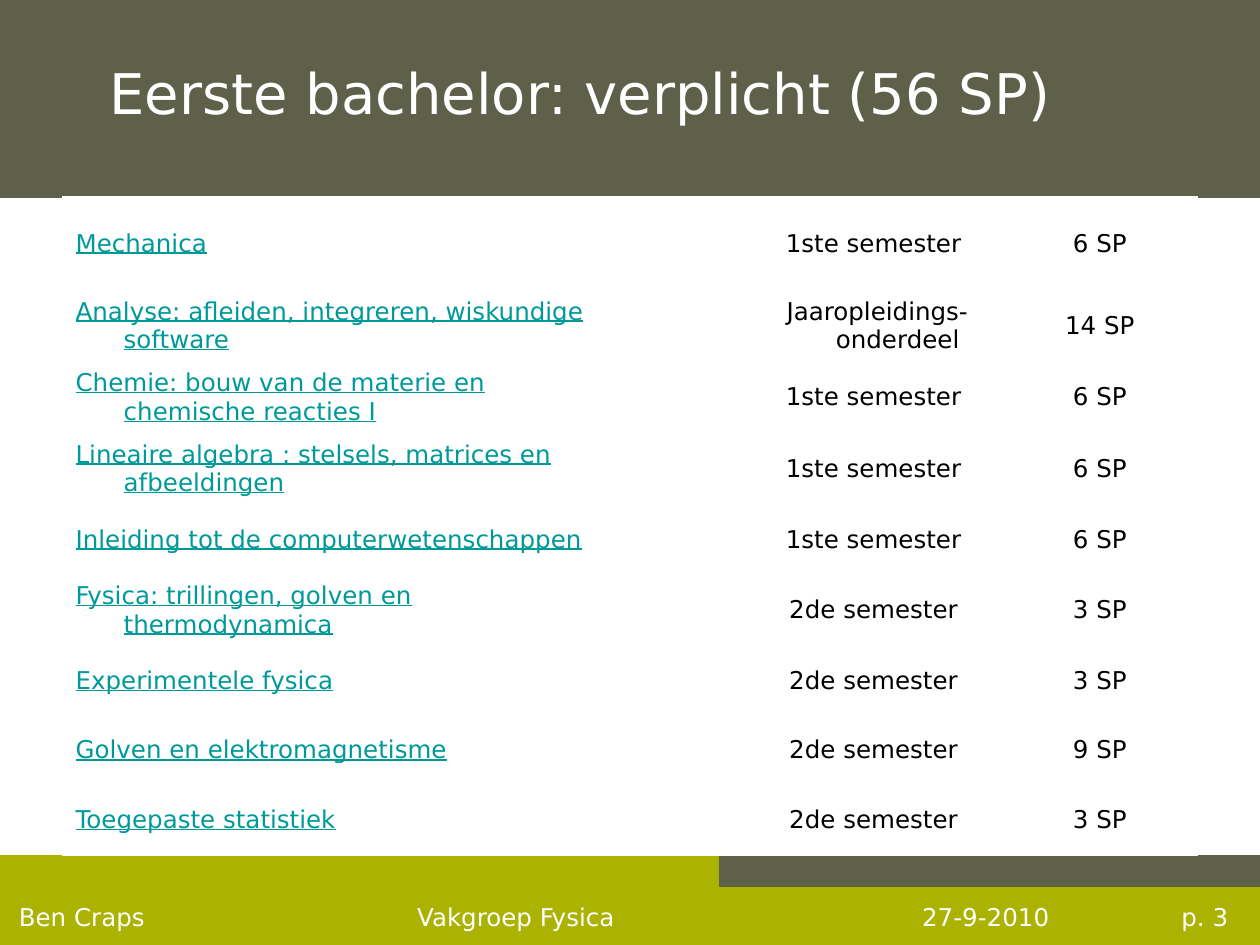
from lxml.etree import SubElement
from pptx import Presentation
from pptx.dml.color import RGBColor
from pptx.enum.shapes import MSO_SHAPE as Shape
from pptx.enum.text import MSO_ANCHOR as Anchor, PP_ALIGN as Align
from pptx.oxml.ns import qn
from pptx.util import Cm, Pt

COLORS = {"lime": "ABB202", "olive": "5F604A", "white": "FFFFFF",
          "teal": "009999", "black": "000000"}
FONT = "DejaVu Sans"
HANGING = Cm(0.97)
FIRST, SECOND = "1ste semester ", "2de semester "
COURSES = [
    ("Mechanica", FIRST, 6),
    ("Analyse: afleiden, integreren, wiskundige software",
     "Jaaropleidings-onderdeel ", 14),
    ("Chemie: bouw van de materie en chemische reacties I", FIRST, 6),
    ("Lineaire algebra : stelsels, matrices en afbeeldingen", FIRST, 6),
    ("Inleiding tot de computerwetenschappen", FIRST, 6),
    ("Fysica: trillingen, golven en thermodynamica", SECOND, 3),
    ("Experimentele fysica", SECOND, 3),
    ("Golven en elektromagnetisme", SECOND, 9),
    ("Toegepaste statistiek", SECOND, 3),
]


def color(name):
    return RGBColor.from_string(COLORS[name])


def write(frame, text, size=14, ink="white", align=Align.LEFT):
    para = frame.paragraphs[0]
    para.text = text
    para.alignment = align
    para.font.size = Pt(size)
    para.font.name = FONT
    para.font.color.rgb = color(ink)
    return para


def set_margins(frame, left=0, top=0, right=0, bottom=0):
    frame.margin_left, frame.margin_top = left, top
    frame.margin_right, frame.margin_bottom = right, bottom


def add_bar(page, left, top, width, height, fill):
    bar = page.shapes.add_shape(Shape.RECTANGLE, left, top, width, height)
    bar.shadow.inherit = False
    bar.fill.solid()
    bar.fill.fore_color.rgb = color(fill)
    bar.line.color.rgb = color(fill)
    bar.line.width = Pt(0.75)
    return bar


def add_label(page, left, top, width, height, text, align=Align.LEFT):
    box = page.shapes.add_textbox(left, top, width, height)
    frame = box.text_frame
    frame.word_wrap = True
    set_margins(frame)
    return write(frame, text, align=align)


def add_footer(page, left, top, width, height):
    add_bar(page, left, top, width, height, "lime")
    accent = Cm(14.5)
    add_bar(page, left + accent, top, width - accent, Cm(0.61), "olive")

    line_top, line_height = top + Cm(0.94), Cm(0.6)
    author = add_label(page, left + Cm(0.38), line_top, Cm(18), line_height,
                       "Ben Craps\tVakgroep Fysica")
    tabs = SubElement(author._p.get_or_add_pPr(), qn("a:tabLst"))
    SubElement(tabs, qn("a:tab"), pos=str(Cm(8.03)), algn="l")
    # the tab list must come before the default run properties
    author._p.pPr.insert(0, tabs)
    add_label(page, left + Cm(18.59), line_top, Cm(3.02), line_height, "27-9-2010")
    add_label(page, left + Cm(22.71), line_top, Cm(2.05), line_height,
              "p. 3", Align.RIGHT)


def add_title(page, left, top, width, height):
    frame = add_bar(page, left, top, width, height, "olive").text_frame
    frame.word_wrap = True
    frame.vertical_anchor = Anchor.TOP
    set_margins(frame, left=Cm(2.21), top=Cm(1.19))
    write(frame, "Eerste bachelor: verplicht (56 SP)", size=32)


def fill_cell(cell, text, ink, align):
    cell.vertical_anchor = Anchor.MIDDLE
    para = write(cell.text_frame, text, ink=ink, align=align)
    para.font.underline = ink == "teal"
    props = para._p.get_or_add_pPr()
    props.set("marL", str(HANGING))
    props.set("indent", str(-HANGING))


def add_courses(page, left, top, width, height):
    table = page.shapes.add_table(len(COURSES), 4, left, top, width, height).table
    table.first_row = table.horz_banding = False
    for column, size in zip(table.columns, (11.53, 2.21, 5.36, 3.76)):
        column.width = Cm(size)
    first_height = Cm(1.88)
    for index, row in enumerate(table.rows):
        row.height = (first_height if index == 0
                      else (height - first_height) // (len(COURSES) - 1))
    for row, (course, semester, points) in zip(table.rows, COURSES):
        for cell in row.cells:
            cell.fill.background()
        fill_cell(row.cells[0], course, "teal", Align.LEFT)
        fill_cell(row.cells[2], semester, "black", Align.CENTER)
        fill_cell(row.cells[3], f"{points} SP ", "black", Align.CENTER)


def main():
    deck = Presentation()
    deck.slide_width, deck.slide_height = Cm(25.4), Cm(19.05)
    page = deck.slides.add_slide(deck.slide_layouts[6])
    add_footer(page, 0, Cm(17.25), deck.slide_width, Cm(1.8))
    add_title(page, 0, 0, deck.slide_width, Cm(3.99))
    add_courses(page, Cm(1.27), Cm(3.97), Cm(22.86), Cm(13.13))
    deck.save("out.pptx")


if __name__ == "__main__":
    main()
